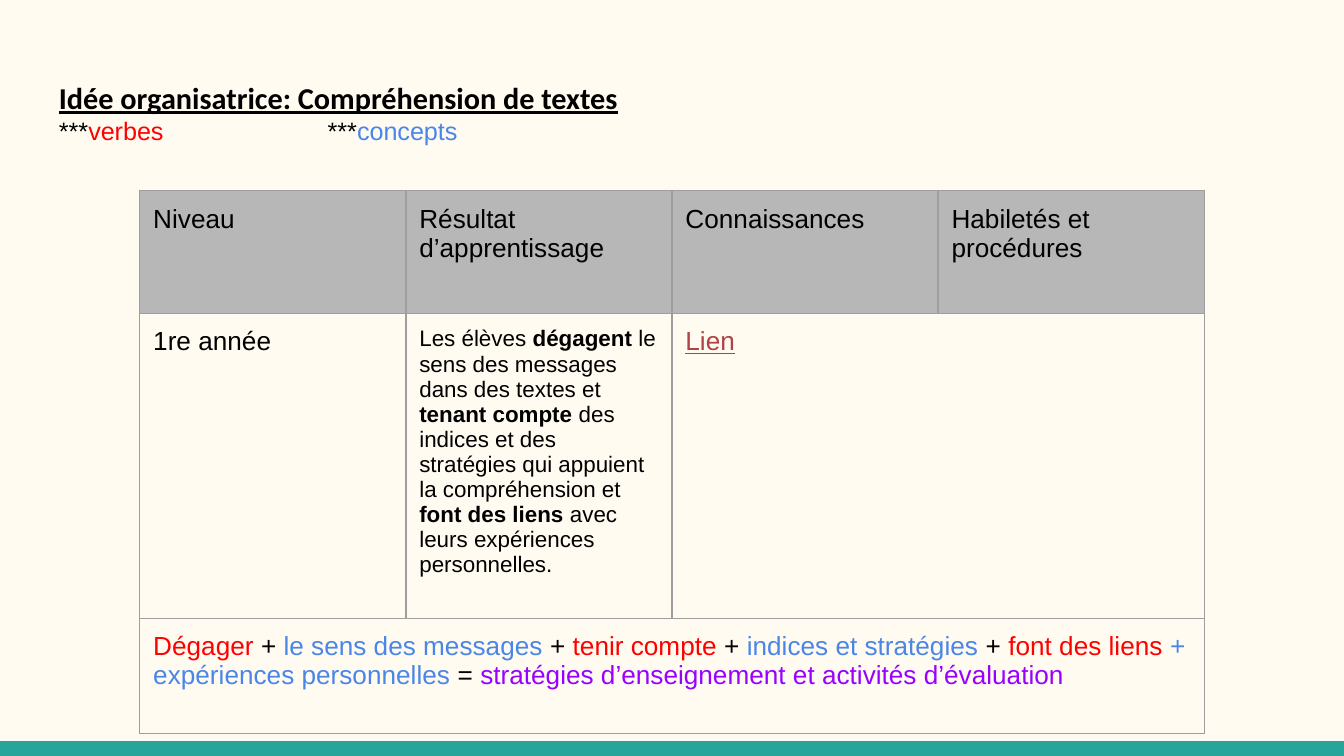
from lxml.etree import SubElement
from pptx import Presentation
from pptx.dml.color import RGBColor
from pptx.enum.shapes import MSO_SHAPE as Shape
from pptx.oxml.ns import qn
from pptx.util import Inches, Pt

BLACK, RED, BLUE, PURPLE = "000000", "FF0000", "4A86E8", "9900FF"
LINK, GREY, BORDER, CREAM, TEAL = "AF4345", "B7B7B7", "9E9E9E", "FFFBF0", "26A69A"
MARGIN = Inches(0.1)
SLIDE_WIDTH = Inches(10)
SLIDE_HEIGHT = SLIDE_WIDTH * 9 // 16

HEADINGS = ["Niveau", "Résultat d’apprentissage", "Connaissances", "Habiletés et procédures"]
OUTCOME = [
    ("Les élèves", False), (" dégagent", True),
    (" le sens des messages dans des textes et ", False), ("tenant compte ", True),
    ("des indices et des stratégies qui appuient la compréhension et", False),
    (" font des liens ", True), ("avec leurs expériences personnelles.", False),
]
LEGEND = [("***", BLACK), ("verbes", RED), ("\t\t***", BLACK), ("concepts", BLUE)]
SUMMARY = [
    ("Dégager", RED), (" + ", BLACK), ("le sens des messages ", BLUE), ("+", BLACK),
    (" tenir compte", RED), (" + ", BLACK), ("indices et stratégies ", BLUE),
    ("+ ", BLACK), ("font des liens", RED), (" + expériences personnelles ", BLUE),
    ("= ", BLACK), ("stratégies d’enseignement et activités d’évaluation", PURPLE),
]


def paint(fill, color):
    """Give a fill one solid colour."""
    fill.solid()
    fill.fore_color.rgb = RGBColor.from_string(color)


def write(paragraph, text, size=14, color=BLACK, font="Arial", bold=False, underline=False):
    """Append one formatted run to a paragraph."""
    run = paragraph.add_run()
    run.text = text
    run.font.name = font
    run.font.size = Pt(size)
    run.font.bold = bold
    run.font.underline = underline
    run.font.color.rgb = RGBColor.from_string(color)


def set_margins(holder):
    """Set the same inner margin on every side."""
    holder.margin_left = holder.margin_right = MARGIN
    holder.margin_top = holder.margin_bottom = MARGIN


def add_footer_bar(slide):
    """Draw the coloured bar along the bottom edge."""
    height = Inches(0.11)
    bar = slide.shapes.add_shape(
        Shape.RECTANGLE, 0, SLIDE_HEIGHT - height, SLIDE_WIDTH, height)
    bar.shadow.inherit = False
    bar.line.fill.background()
    paint(bar.fill, TEAL)


def add_title(slide):
    """Write the heading and its colour legend."""
    frame = slide.shapes.add_textbox(
        Inches(0.34), Inches(0.49), Inches(9.32), Inches(0.67)).text_frame
    frame.word_wrap = True
    set_margins(frame)
    write(frame.paragraphs[0], "Idée organisatrice: Compréhension de textes",
          size=16.2, font="Calibri", bold=True, underline=True)
    legend = frame.add_paragraph()
    tabs = SubElement(legend._p.get_or_add_pPr(), qn("a:tabLst"))
    for stop in (1, 2):
        SubElement(tabs, qn("a:tab"), pos=str(Inches(stop)), algn="l")
    for text, color in LEGEND:
        write(legend, text, size=13.5, color=color)


def style_cell(cell, color=None):
    """Set the margins, borders and fill of a table cell."""
    set_margins(cell)
    properties = cell._tc.get_or_add_tcPr()
    for side in ("lnL", "lnR", "lnT", "lnB"):
        edge = SubElement(properties, qn(f"a:{side}"), w=str(Pt(0.75)))
        SubElement(SubElement(edge, qn("a:solidFill")), qn("a:srgbClr"), val=BORDER)
    if color:
        paint(cell.fill, color)
    else:
        cell.fill.background()


def add_outcomes_table(slide):
    """Build the table of learning outcomes."""
    heights = [0.91, 2.27, 0.86]
    table = slide.shapes.add_table(
        len(heights), len(HEADINGS), Inches(1.04), Inches(1.42),
        Inches(7.92), Inches(sum(heights))).table
    table.first_row = table.horz_banding = False
    for column in table.columns:
        column.width = Inches(1.98)
    for index, (row, height) in enumerate(zip(table.rows, heights)):
        row.height = Inches(height)
        for cell in row.cells:
            style_cell(cell, GREY if index == 0 else None)
    table.cell(1, 2).merge(table.cell(1, 3))
    table.cell(2, 0).merge(table.cell(2, 3))

    def line(row, column):
        """Return the first paragraph of a cell."""
        return table.cell(row, column).text_frame.paragraphs[0]

    for column, heading in enumerate(HEADINGS):
        write(line(0, column), heading)
    write(line(1, 0), "1re année")
    for text, bold in OUTCOME:
        write(line(1, 1), text, size=12, bold=bold)
    write(line(1, 2), "Lien", color=LINK, underline=True)
    for text, color in SUMMARY:
        write(line(2, 0), text, color=color)


def main():
    """Build and save the slide."""
    deck = Presentation()
    deck.slide_width, deck.slide_height = SLIDE_WIDTH, SLIDE_HEIGHT
    slide = deck.slides.add_slide(deck.slide_layouts[6])
    paint(slide.background.fill, CREAM)
    add_footer_bar(slide)
    add_title(slide)
    add_outcomes_table(slide)
    deck.save("out.pptx")


if __name__ == "__main__":
    main()
